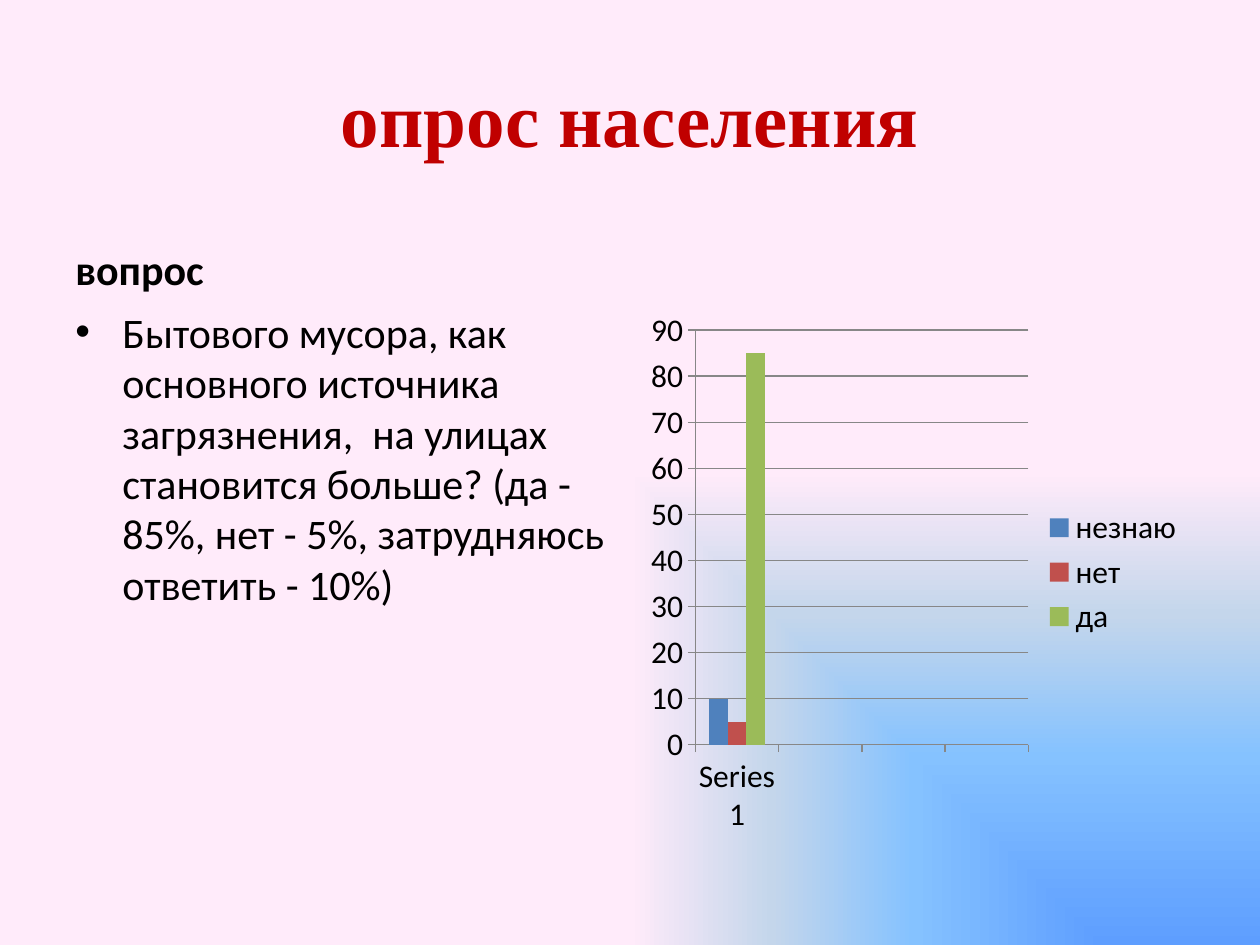
from dataclasses import dataclass

import lxml.etree
import pptx
import pptx.chart.data
import pptx.dml.color
import pptx.enum.chart
import pptx.enum.text
import pptx.oxml.ns
import pptx.util
from pptx.util import Cm


@dataclass(frozen=True)
class Theme:
    title_font: str = "Times New Roman"
    body_font: str = "Calibri"
    title_size: int = 44
    body_size: int = 24
    chart_size: int = 18
    title_color: str = "C00000"
    text_color: str = "000000"
    axis_color: str = "878787"
    series_colors: tuple = ("4F81BD", "C0504D", "9BBB59")
    background: tuple = ((0, "5E9EFF"), (40, "85C2FF"), (70, "C4D6EB"), (100, "FFEBFA"))


THEME = Theme()
MARGIN = Cm(1.27)
COLUMN_WIDTH = Cm(11.23)
COLUMN_TOP = Cm(6.05)
COLUMN_HEIGHT = Cm(10.97)
CHART_LEFT = Cm(12.9)

QUESTION = (
    "Бытового мусора, как основного источника загрязнения,  на улицах "
    "становится больше? (да - 85%, нет - 5%, затрудняюсь ответить - 10%)"
)
CATEGORIES = ("Series 1", "", "", "")
ANSWERS = (("незнаю", 10), ("нет", 5), ("да", 85))


def rgb(color):
    return pptx.dml.color.RGBColor.from_string(color)


def style_font(font, name, size, color, bold=False):
    font.name = name
    font.size = pptx.util.Pt(size)
    font.color.rgb = rgb(color)
    font.bold = bold


def set_background(s):
    """Fill the slide with a rectangular gradient spreading from the bottom right corner."""
    s.background.fill.solid()
    solid = s.element.find(".//" + pptx.oxml.ns.qn("a:solidFill"))
    stops = "".join(
        f'<a:gs pos="{pos * 1000}"><a:srgbClr val="{color}"/></a:gs>'
        for pos, color in THEME.background
    )
    gradient = lxml.etree.fromstring(
        f'<a:gradFill {pptx.oxml.ns.nsdecls("a")} rotWithShape="1"><a:gsLst>{stops}</a:gsLst>'
        '<a:path path="rect"><a:fillToRect l="100000" t="100000"/></a:path></a:gradFill>'
    )
    solid.getparent().replace(solid, gradient)


def add_text(s, text, box, anchor):
    """Add a wrapped one-paragraph text box and return its paragraph."""
    tf = s.shapes.add_textbox(*box).text_frame
    tf.word_wrap = True
    tf.vertical_anchor = anchor
    p = tf.paragraphs[0]
    p.text = text
    return p


def add_title(s, text):
    p = add_text(s, text, (MARGIN, Cm(0.76), Cm(22.86), Cm(3.18)),
                 pptx.enum.text.MSO_ANCHOR.MIDDLE)
    p.alignment = pptx.enum.text.PP_ALIGN.CENTER
    style_font(p.font, THEME.title_font, THEME.title_size, THEME.title_color, bold=True)


def add_body(s, text, box, anchor, bold=False):
    p = add_text(s, text, box, anchor)
    p.space_before = pptx.util.Pt(0.2 * THEME.body_size)
    style_font(p.font, THEME.body_font, THEME.body_size, THEME.text_color, bold)
    return p


def add_bullet(p):
    indent = Cm(0.95)
    properties = p._p.get_or_add_pPr()
    properties.set("marL", str(indent))
    properties.set("indent", str(-indent))
    for tag, name, value in (("a:buFont", "typeface", "Arial"), ("a:buChar", "char", "•")):
        lxml.etree.SubElement(properties, pptx.oxml.ns.qn(tag)).set(name, value)
    # The bullet must precede the default run properties.
    defaults = properties.find(pptx.oxml.ns.qn("a:defRPr"))
    if defaults is not None:
        properties.append(defaults)


def style_axis(axis):
    axis.major_tick_mark = pptx.enum.chart.XL_TICK_MARK.OUTSIDE
    axis.format.line.color.rgb = rgb(THEME.axis_color)


def add_answer_chart(s):
    data = pptx.chart.data.CategoryChartData()
    data.categories = CATEGORIES
    for name, value in ANSWERS:
        data.add_series(name, [value] + [None] * (len(CATEGORIES) - 1))
    chart = s.shapes.add_chart(
        pptx.enum.chart.XL_CHART_TYPE.COLUMN_CLUSTERED,
        CHART_LEFT, COLUMN_TOP, COLUMN_WIDTH, COLUMN_HEIGHT, data,
    ).chart
    style_font(chart.font, THEME.body_font, THEME.chart_size, THEME.text_color)
    chart.has_title = False
    chart.has_legend = True
    chart.legend.position = pptx.enum.chart.XL_LEGEND_POSITION.RIGHT
    chart.legend.include_in_layout = False

    style_axis(chart.category_axis)
    style_axis(chart.value_axis)
    chart.value_axis.has_major_gridlines = True
    chart.value_axis.major_gridlines.format.line.color.rgb = rgb(THEME.axis_color)

    plot = chart.plots[0]
    plot.gap_width = 150
    plot.vary_by_categories = False
    for series, color in zip(plot.series, THEME.series_colors):
        series.format.fill.solid()
        series.format.fill.fore_color.rgb = rgb(color)


def main():
    prs = pptx.Presentation()
    prs.slide_width, prs.slide_height = Cm(25.4), Cm(19.05)
    s = prs.slides.add_slide(prs.slide_layouts[6])
    set_background(s)
    add_title(s, "опрос населения")
    add_body(s, "вопрос", (MARGIN, Cm(4.27), COLUMN_WIDTH, Cm(1.78)),
             pptx.enum.text.MSO_ANCHOR.BOTTOM, bold=True)
    question = add_body(s, QUESTION, (MARGIN, COLUMN_TOP, COLUMN_WIDTH, COLUMN_HEIGHT),
                        pptx.enum.text.MSO_ANCHOR.TOP)
    add_bullet(question)
    add_answer_chart(s)
    prs.save("out.pptx")


if __name__ == "__main__":
    main()
